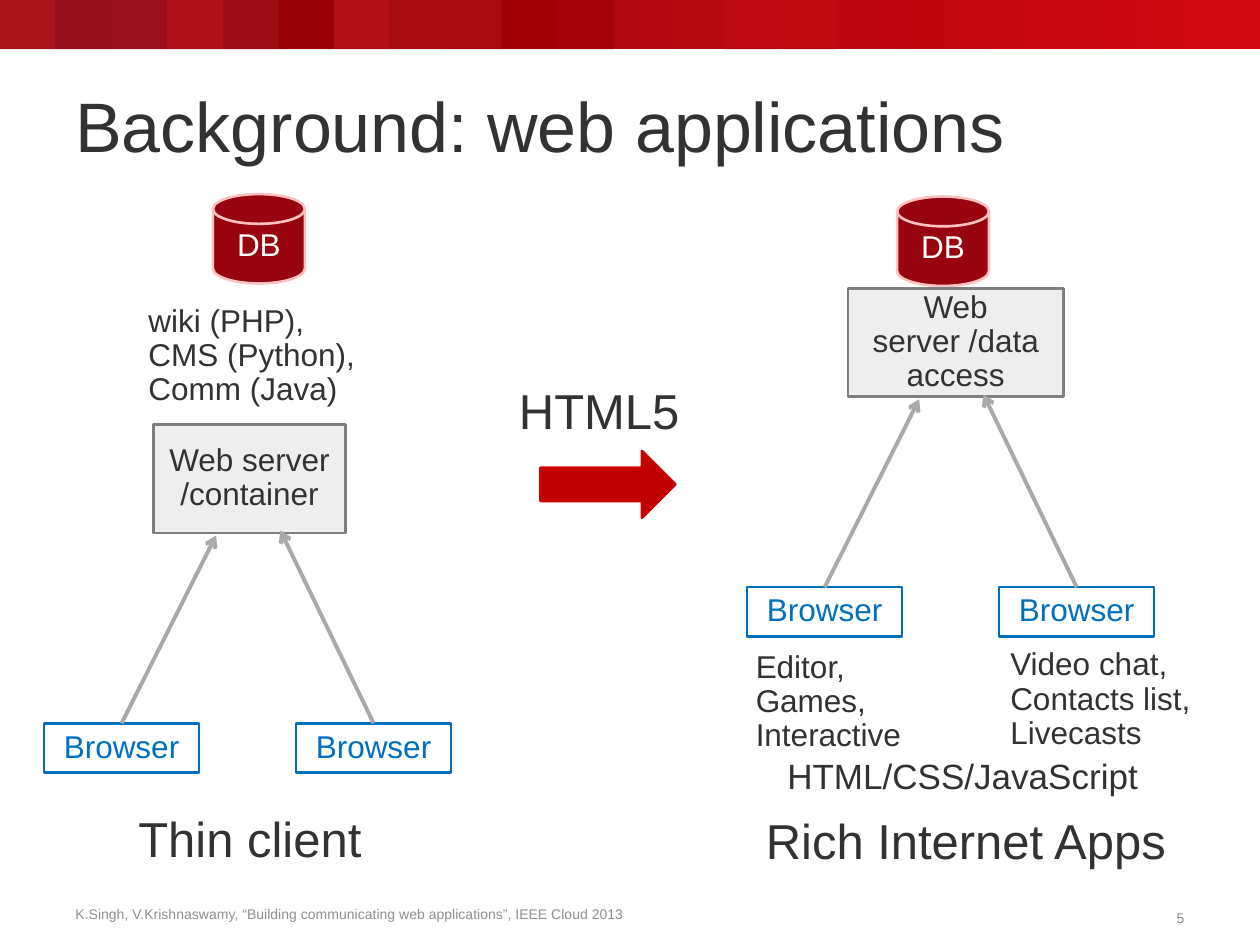
from lxml.etree import SubElement
from pptx import Presentation
from pptx.dml.color import RGBColor
from pptx.enum.shapes import MSO_CONNECTOR, MSO_SHAPE
from pptx.enum.text import MSO_ANCHOR, PP_ALIGN
from pptx.oxml.ns import qn
from pptx.util import Inches, Pt

INK, GREY, BLUE, RED = "323232", "8F8F8F", "0070C0", "98050E"

BAND_WIDTH = 10 / 22.6
BANDS = {0: "AB141C", 1: "95101A", 2: "98101A", 3: "AE1119", 4: "9E0C16",
         5: "9A0007", 6: "B10F16", 7: "A60B12", 8: "A80A11", 9: "A00109",
         10: "A3020A", 13: "BD0A12", 14: "C00A12"}

SYSTEMS = [
    {"database": (1.69, 1.54), "server": (1.22, 3.37, 1.52, 0.86),
     "server_lines": ["Web server /container"], "browsers": (0.35, 5.74)},
    {"database": (7.12, 1.56), "server": (6.73, 2.29, 1.71, 0.86),
     "server_lines": ["Web", "server /data access"], "browsers": (5.93, 4.66)},
]
DATABASE_SIZE = (0.73, 0.71)
BROWSER_SIZE = (1.23, 0.39)
BROWSER_STEP = 2
ARROW_REACHES = [(0.75, 1.49), (-0.74, 1.53)]

LABELS = [
    ((1.08, 2.37, 2, 0.9), 18, ["wiki (PHP),", "CMS (Python),", "Comm (Java)"]),
    ((5.9, 5.12, 1.6, 0.9), 18, ["Editor,", "Games,", "Interactive"]),
    ((7.92, 5.1, 1.9, 0.9), 18, ["Video chat,", "Contacts list,", "Livecasts"]),
    ((1, 6.42, 2, 0.53), 28, ["Thin client"]),
    ((5.98, 6.44, 3.41, 0.53), 28, ["Rich Internet Apps"]),
    ((4.02, 3.02, 1.49, 0.53), 28, ["HTML5"]),
    ((6.15, 5.98, 3.01, 0.4), 20, ["HTML/CSS/JavaScript"]),
]
CITATION = "K.Singh, V.Krishnaswamy, “Building communicating web applications”, IEEE Cloud 2013"


def color(value):
    return RGBColor.from_string(value)


def add_run(paragraph, text, size, ink):
    run = paragraph.add_run()
    run.text = text
    run.font.name = "Arial"
    run.font.size = Pt(size)
    run.font.color.rgb = color(ink)


def add_label(slide, box, size, lines, ink=INK, anchor=MSO_ANCHOR.TOP,
              align=PP_ALIGN.LEFT, wrap=False):
    frame = slide.shapes.add_textbox(*map(Inches, box)).text_frame
    frame.word_wrap = wrap
    frame.vertical_anchor = anchor
    for index, line in enumerate(lines):
        paragraph = frame.add_paragraph() if index else frame.paragraphs[0]
        paragraph.alignment = align
        paragraph.line_spacing = 0.9
        add_run(paragraph, line, size, ink)


def add_block(slide, kind, box, fill=None, line=None, lines=(), ink=INK):
    shape = slide.shapes.add_shape(kind, *map(Inches, box))
    shape.shadow.inherit = False
    if fill:
        shape.fill.solid()
        shape.fill.fore_color.rgb = color(fill)
    else:
        shape.fill.background()
    if line:
        shape.line.color.rgb = color(line)
        shape.line.width = Pt(1.5)
    else:
        shape.line.fill.background()
    frame = shape.text_frame
    frame.word_wrap = True
    frame.vertical_anchor = MSO_ANCHOR.MIDDLE
    paragraph = frame.paragraphs[0]
    paragraph.alignment = PP_ALIGN.CENTER
    paragraph.line_spacing = 0.9
    for index, text in enumerate(lines):
        if index:
            paragraph.add_line_break()
        add_run(paragraph, text, 18, ink)
    return shape


def add_arrow(slide, start, end):
    arrow = slide.shapes.add_connector(MSO_CONNECTOR.STRAIGHT, *map(Inches, start + end))
    arrow.line.color.rgb = color("A9A9A9")
    arrow.line.width = Pt(2.25)
    SubElement(arrow.line._get_or_add_ln(), qn("a:tailEnd"), type="arrow")
    SubElement(arrow._element.spPr, qn("a:effectLst"))


def add_header(slide):
    banner = add_block(slide, MSO_SHAPE.RECTANGLE, (0, 0, 10, 0.39), RED)
    banner.fill.gradient()
    banner.fill.gradient_angle = 0
    for stop, value in zip(banner.fill.gradient_stops, ("91050F", "D10811")):
        stop.color.rgb = color(value)
    for column, value in BANDS.items():
        add_block(slide, MSO_SHAPE.RECTANGLE,
                  (column * BAND_WIDTH, 0, BAND_WIDTH, 0.39), value)


def add_system(slide, system):
    add_block(slide, MSO_SHAPE.FLOWCHART_MAGNETIC_DISK, system["database"] + DATABASE_SIZE,
              RED, "FFC2C2", ["DB"], "FFFFFF")
    add_block(slide, MSO_SHAPE.RECTANGLE, system["server"],
              "EEEEEE", "7F7F7F", system["server_lines"])
    left, top = system["browsers"]
    for index, (across, up) in enumerate(ARROW_REACHES):
        x = left + index * BROWSER_STEP
        add_block(slide, MSO_SHAPE.RECTANGLE, (x, top) + BROWSER_SIZE,
                  line=BLUE, lines=["Browser"], ink=BLUE)
        center = x + BROWSER_SIZE[0] / 2
        add_arrow(slide, (center, top), (center + across, top - up))


def main():
    presentation = Presentation()
    presentation.slide_width, presentation.slide_height = Inches(10), Inches(7.5)
    slide = presentation.slides.add_slide(presentation.slide_layouts[6])
    add_header(slide)
    add_label(slide, (0.5, 0.46, 9, 0.92), 40, ["Background: web applications"],
              anchor=MSO_ANCHOR.BOTTOM, wrap=True)
    for system in SYSTEMS:
        add_system(slide, system)
    add_block(slide, MSO_SHAPE.RIGHT_ARROW, (4.29, 3.58, 1.07, 0.53), "C00000", "CC0000")
    for box, size, lines in LABELS:
        add_label(slide, box, size, lines, wrap=True)
    add_label(slide, (0.5, 7.15, 4.62, 0.22), 8, [CITATION], GREY, MSO_ANCHOR.MIDDLE)
    add_label(slide, (9.16, 7.18, 0.34, 0.22), 8, ["5"], GREY,
              MSO_ANCHOR.MIDDLE, PP_ALIGN.RIGHT)
    presentation.save("out.pptx")


if __name__ == "__main__":
    main()
